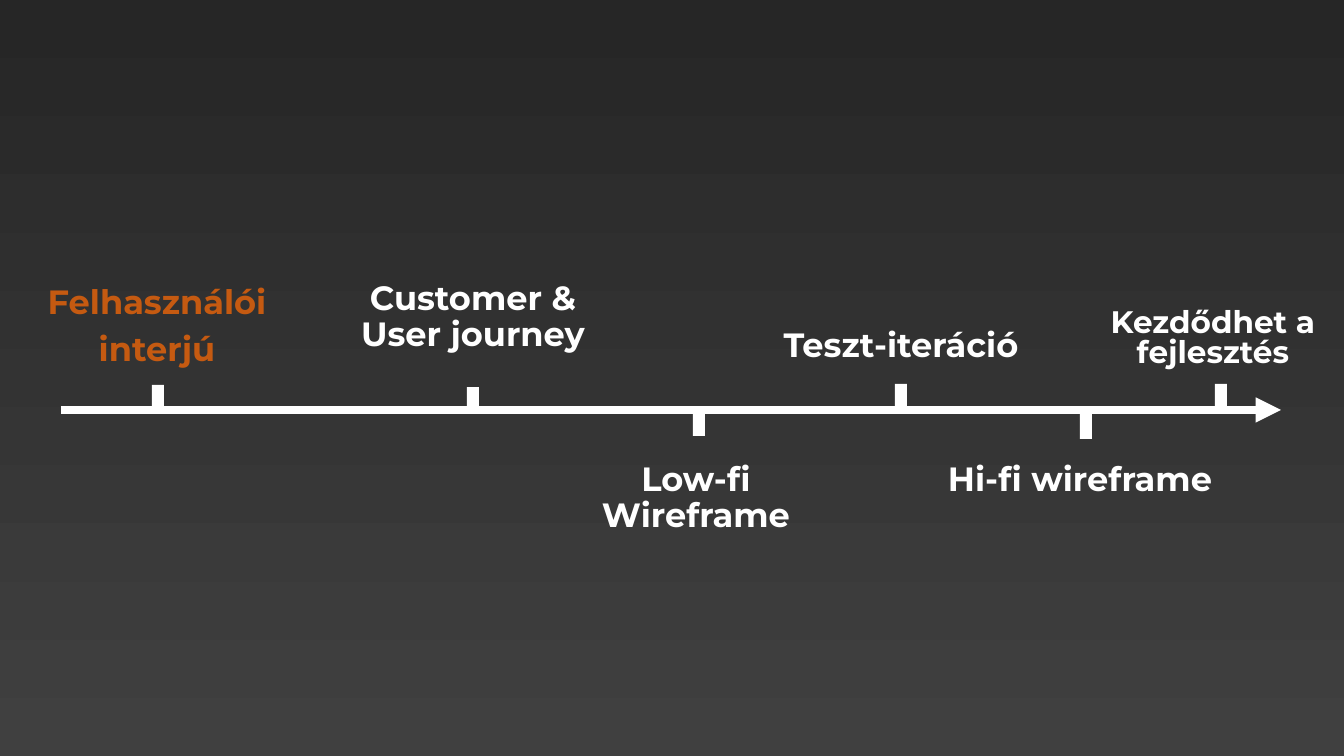
"""Build a project timeline slide with six milestones."""
from dataclasses import dataclass

from lxml.etree import SubElement
from pptx import Presentation
from pptx.dml.color import RGBColor
from pptx.enum.shapes import MSO_CONNECTOR, MSO_SHAPE
from pptx.enum.text import MSO_ANCHOR, PP_ALIGN
from pptx.oxml.ns import qn
from pptx.util import Emu, Pt


@dataclass(frozen=True)
class Theme:
    """Hold the colours, font and sizes of the slide."""
    top: RGBColor = RGBColor(0x26, 0x26, 0x26)
    bottom: RGBColor = RGBColor(0x40, 0x40, 0x40)
    white: RGBColor = RGBColor(0xFF, 0xFF, 0xFF)
    accent: RGBColor = RGBColor(0xC5, 0x5A, 0x11)
    font: str = "Montserrat"
    label_size: float = 24
    small_size: float = 22.2
    paragraph_gap: float = 10
    axis_width: float = 6


THEME = Theme()
AXIS_LEFT, AXIS_RIGHT, AXIS_Y = 61, 1281, 410
TICK_WIDTH, TICK_HEIGHT = 12, 26
LABEL_WIDTH = 300


@dataclass(frozen=True)
class Milestone:
    """Describe a milestone: its tick and its label."""
    lines: tuple
    tick_left: int
    tick_top: int
    label_left: int
    label_top: int
    label_height: int
    color: RGBColor = THEME.white
    size: float = THEME.label_size
    spacing: float = 0.9


MILESTONES = (
    Milestone(("Felhasználói", "interjú"), 152, 385, 7, 284, 94,
              color=THEME.accent, spacing=0.8),
    Milestone(("Customer & User journey",), 467, 387, 323, 276, 94),
    Milestone(("Low-fi Wireframe",), 693, 410, 546, 457, 94),
    Milestone(("Teszt-iteráció",), 895, 384, 751, 324, 57),
    Milestone(("Hi-fi wireframe",), 1080, 413, 930, 458, 57),
    Milestone(("Kezdődhet a fejlesztés",), 1215, 384, 1063, 305, 73,
              size=THEME.small_size, spacing=0.8),
)


def px(length):
    """Turn a length in px into EMU."""
    return Emu(round(length * 914400 / 100.8))


def paint_background(slide):
    """Fill the background with a gradient from top to bottom."""
    fill = slide.background.fill
    fill.gradient()
    fill.gradient_angle = 270
    for stop, color in zip(fill.gradient_stops, (THEME.top, THEME.bottom)):
        stop.color.rgb = color


def add_axis(slide):
    """Draw the timeline arrow."""
    axis = slide.shapes.add_connector(
        MSO_CONNECTOR.STRAIGHT,
        px(AXIS_LEFT), px(AXIS_Y), px(AXIS_RIGHT), px(AXIS_Y))
    axis.line.color.rgb = THEME.white
    axis.line.width = Pt(THEME.axis_width)
    SubElement(axis.line._get_or_add_ln(), qn("a:tailEnd"), type="triangle")
    SubElement(axis._element.spPr, qn("a:effectLst"))


def add_tick(slide, milestone):
    """Draw the mark of a milestone on the axis."""
    tick = slide.shapes.add_shape(
        MSO_SHAPE.RECTANGLE, px(milestone.tick_left), px(milestone.tick_top),
        px(TICK_WIDTH), px(TICK_HEIGHT))
    tick.shadow.inherit = False
    tick.fill.solid()
    tick.fill.fore_color.rgb = THEME.white
    tick.line.fill.background()


def add_label(slide, milestone):
    """Write the name of a milestone."""
    label = slide.shapes.add_textbox(
        px(milestone.label_left), px(milestone.label_top),
        px(LABEL_WIDTH), px(milestone.label_height))
    frame = label.text_frame
    frame.word_wrap = True
    frame.vertical_anchor = MSO_ANCHOR.TOP
    for index, line in enumerate(milestone.lines):
        paragraph = frame.add_paragraph() if index else frame.paragraphs[0]
        paragraph.alignment = PP_ALIGN.CENTER
        paragraph.line_spacing = milestone.spacing
        paragraph.space_before = Pt(THEME.paragraph_gap if index else 0)
        run = paragraph.add_run()
        run.text = line
        run.font.name = THEME.font
        run.font.size = Pt(milestone.size)
        run.font.bold = True
        run.font.color.rgb = milestone.color


def main():
    """Build and save the presentation."""
    presentation = Presentation()
    presentation.slide_width = px(1344)
    presentation.slide_height = px(756)
    slide = presentation.slides.add_slide(presentation.slide_layouts[6])
    paint_background(slide)
    add_axis(slide)
    for milestone in MILESTONES:
        add_tick(slide, milestone)
        add_label(slide, milestone)
    presentation.save("out.pptx")


if __name__ == "__main__":
    main()
